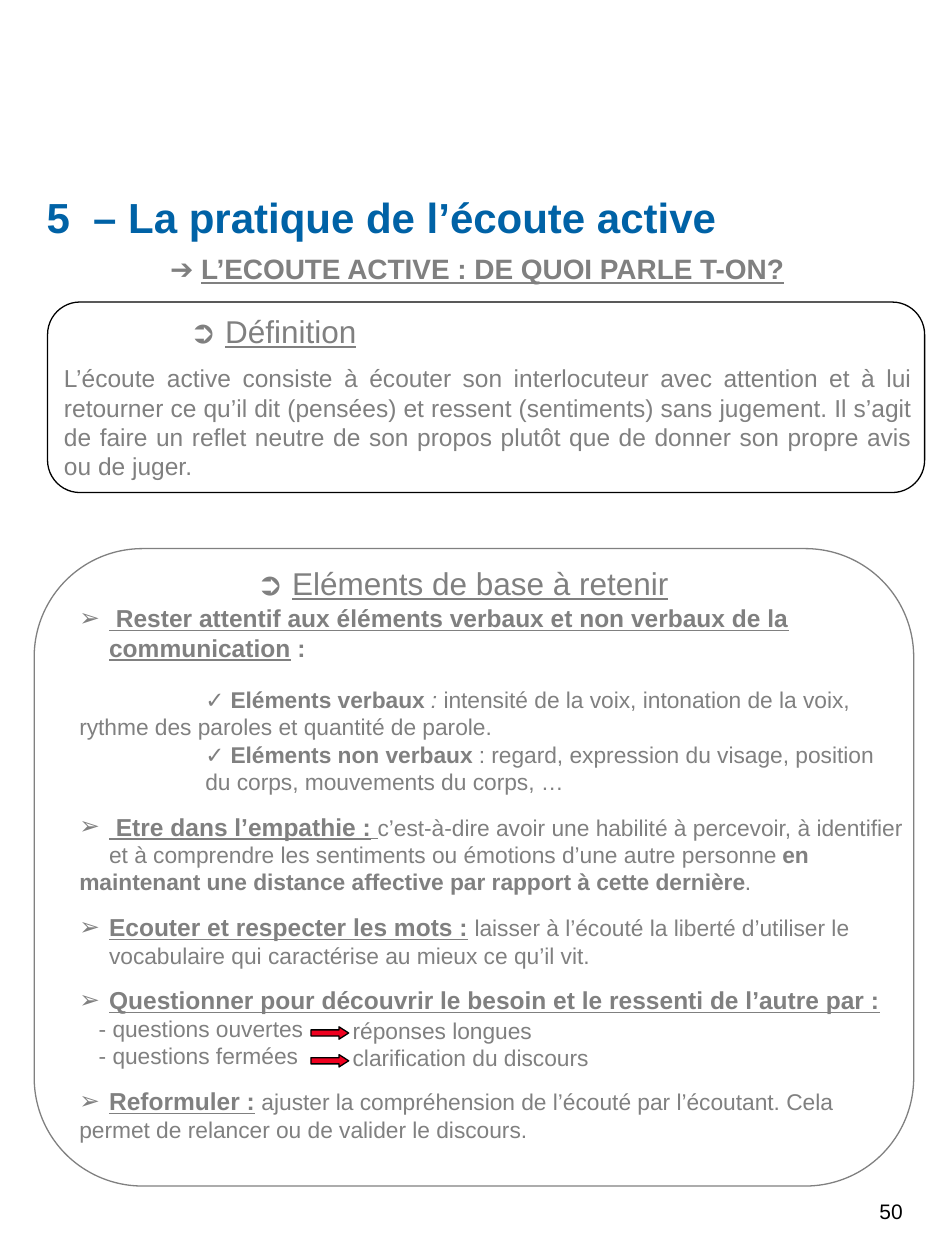
from pptx import Presentation
from pptx.dml.color import RGBColor
from pptx.enum.shapes import MSO_SHAPE
from pptx.enum.text import PP_ALIGN
from pptx.oxml import parse_xml
from pptx.oxml.ns import nsdecls
from pptx.util import Cm, Pt

COLORS = {"title": "0062A6", "text": "808080", "black": "000000", "arrow": "EF001F"}
BOLD = {"bold": True}
ITALIC = {"italic": True}
UNDERLINE = {"underline": True}
HEADING = {"size": Pt(14), "bold": True, "underline": True}

# Paragraph formats: indents in cm, spacing in points
BULLET = {"left": 0.6, "first": -0.6, "bullet": "➢", "before": 10.7}
QUESTION = {"first": 0.39}


def add_text(slide, box, paragraphs, size, color="text", right_inset=0.25):
    """Each paragraph is a format dict and a list of (text, font values)."""
    shape = slide.shapes.add_textbox(*[Cm(value) for value in box])
    frame = shape.text_frame
    frame.word_wrap = True
    frame.margin_right = Cm(right_inset)
    for index, (layout, runs) in enumerate(paragraphs):
        paragraph = frame.add_paragraph() if index else frame.paragraphs[0]
        values = {
            "alignment": layout.get("align", PP_ALIGN.LEFT),
            "space_before": Pt(layout.get("before", 0)),
            "line_spacing": Pt(layout.get("leading", round(size * 1.2, 1))),
        }
        for name, value in values.items():
            setattr(paragraph, name, value)
        properties = paragraph._p.get_or_add_pPr()
        properties.set("marL", str(Cm(layout.get("left", 0))))
        properties.set("indent", str(Cm(layout.get("first", 0))))
        if "bullet" in layout:
            properties.append(parse_xml(f'<a:buFont {nsdecls("a")} typeface="Arial"/>'))
            properties.append(parse_xml(
                f'<a:buChar {nsdecls("a")} char="{layout["bullet"]}"/>'))
        for text, font_values in runs:
            run = paragraph.add_run()
            run.text = text
            run.font.color.rgb = RGBColor.from_string(COLORS[color])
            for name, value in ({"name": "Arial", "size": Pt(size)} | font_values).items():
                setattr(run.font, name, value)


def add_outlined(slide, kind, box, line, adjustments, fill=None):
    shape = slide.shapes.add_shape(kind, *[Cm(value) for value in box])
    shape.shadow.inherit = False
    shape.line.color.rgb = RGBColor.from_string(COLORS[line])
    shape.line.width = Pt(0.75)
    for index, value in enumerate(adjustments):
        shape.adjustments[index] = value
    if fill:
        shape.fill.solid()
        shape.fill.fore_color.rgb = RGBColor.from_string(COLORS[fill])
    else:
        shape.fill.background()


presentation = Presentation()
presentation.slide_width = Cm(19.05)
presentation.slide_height = Cm(25.4)
slide = presentation.slides.add_slide(presentation.slide_layouts[6])

# Rounded frames
for box, line in [((0.96, 6.09, 17.68, 3.84), "black"),
                  ((0.69, 11.06, 17.73, 12.85), "text")]:
    add_outlined(slide, MSO_SHAPE.ROUNDED_RECTANGLE, box, line, [0.17])

# Title and subtitle
add_text(slide, (0.69, 3.73, 17.78, 1.27), [
    ({}, [("5  – La pratique de l’écoute active", BOLD)]),
], 24, "title")
add_text(slide, (0.98, 4.95, 16.79, 0.94), [
    ({"first": 2.2}, [("➔ ", BOLD),
                      ("L’ECOUTE ACTIVE : DE QUOI PARLE T-ON?", BOLD | UNDERLINE)]),
], 16)

# Definition
add_text(slide, (1.04, 6.17, 17.6, 3.68), [
    ({"first": 2.54, "leading": 21.6},
     [("➲ ", {"size": Pt(18)}), ("Définition", {"size": Pt(18)} | UNDERLINE)]),
    ({"align": PP_ALIGN.JUSTIFY, "before": 7.5}, [
        ("L’écoute active consiste à écouter son interlocuteur avec attention et à lui "
         "retourner ce qu’il dit (pensées) et ressent (sentiments) sans jugement. Il s’agit "
         "de faire un reflet neutre de son propos plutôt que de donner son propre avis "
         "ou de juger.", {})]),
], 14)

# Key points
add_text(slide, (2.39, 11.25, 11.38, 1.02), [
    ({"first": 2.54}, [("➲ ", {}), ("Eléments de base à retenir", UNDERLINE)]),
], 18, right_inset=0)
add_text(slide, (1.35, 12.04, 17.32, 11.53), [
    (BULLET | {"before": 0, "leading": 16.8}, [
        (" Rester attentif aux éléments verbaux et non verbaux de la communication", HEADING),
        ("\u00a0:", {"size": Pt(14)} | BOLD)]),
    ({"first": 2.54, "before": 13.5}, [
        ("✓ Eléments verbaux", BOLD), (" :", ITALIC),
        (" intensité de la voix, intonation de la voix, rythme des paroles "
         "et quantité de parole.", {})]),
    ({"left": 2.54}, [
        ("✓ Eléments non verbaux", BOLD),
        ("\u00a0: regard, expression du visage, position", {})]),
    ({"left": 2.54}, [("du corps, mouvements du corps, …", {})]),
    (BULLET, [
        (" Etre dans l’empathie :", HEADING), (" ", BOLD | UNDERLINE),
        ("c’est-à-dire avoir une habilité à percevoir, à identifier et à comprendre "
         "les sentiments ou émotions d’une autre personne ", {}), ("en", BOLD)]),
    ({}, [("maintenant une distance affective par rapport à cette dernière", BOLD),
          (".", {})]),
    (BULLET, [
        ("Ecouter et respecter les mots :", HEADING),
        (" laisser à l’écouté la liberté d’utiliser le vocabulaire qui caractérise "
         "au mieux ce qu’il vit.", {})]),
    (BULLET, [("Questionner pour découvrir le besoin et le ressenti de l’autre par :",
               HEADING)]),
    (QUESTION, [("- questions ouvertes", {})]),
    (QUESTION, [("- questions fermées", {})]),
    (BULLET, [
        ("Reformuler :", HEADING),
        (" ajuster la compréhension de l’écouté par l’écoutant. Cela", {})]),
    ({}, [("permet de relancer ou de valider le discours.", {})]),
], 13)

# Answers, level with the two question types
add_text(slide, (6.86, 20.37, 6, 1.35), [
    ({}, [("réponses longues", {})]),
    ({}, [("clarification du discours", {})]),
], 13)

# Arrows between question types and answers
for top in (20.7, 21.26):
    add_outlined(slide, MSO_SHAPE.RIGHT_ARROW, (6.27, top, 0.76, 0.25),
                 "black", [0.5, 0.78], "arrow")

# Page number
add_text(slide, (17.48, 24.03, 1.57, 1.37), [({}, [("50", {})])], 12, "black")

presentation.save("out.pptx")
